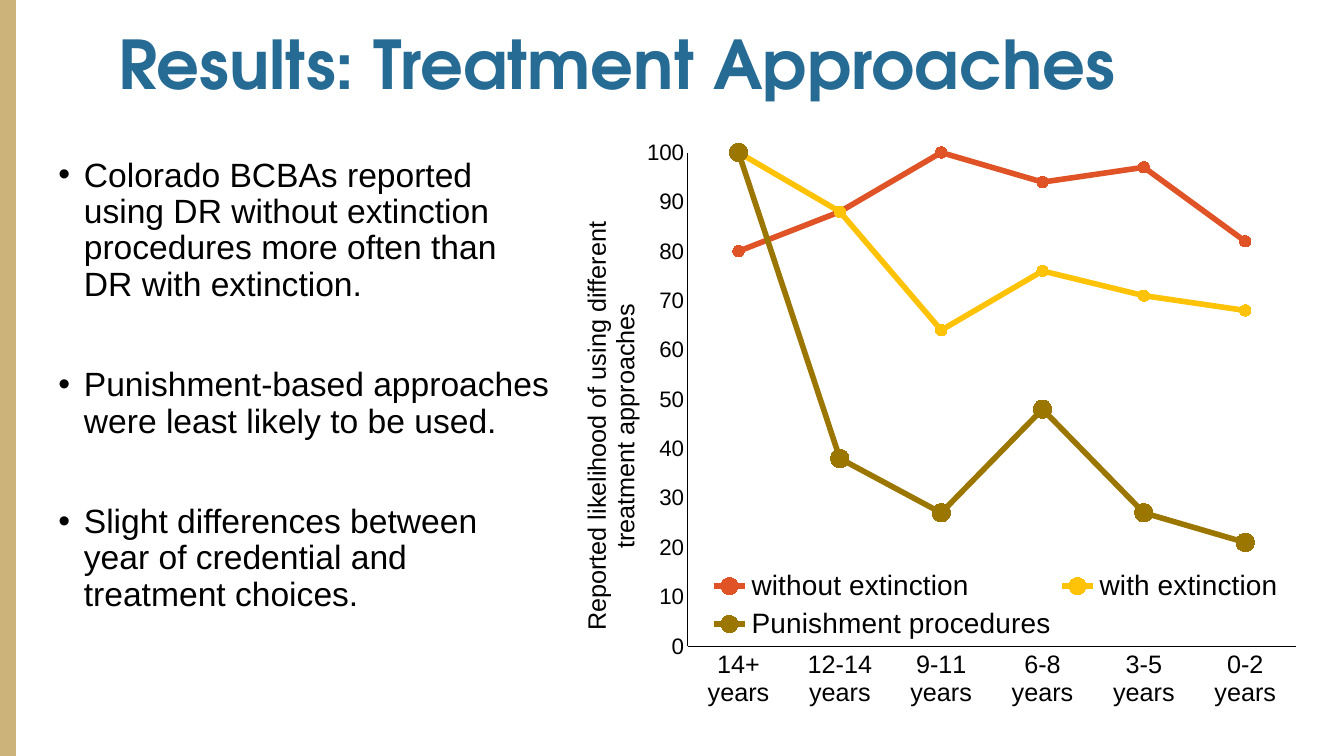
"""Build the treatment approaches results slide."""
from lxml.etree import Element, SubElement
from pptx import Presentation
from pptx.chart.data import CategoryChartData
from pptx.dml.color import RGBColor
from pptx.enum.chart import XL_CHART_TYPE, XL_LEGEND_POSITION, XL_MARKER_STYLE, XL_TICK_MARK
from pptx.enum.shapes import MSO_SHAPE
from pptx.enum.text import MSO_ANCHOR, MSO_AUTO_SIZE, PP_ALIGN
from pptx.oxml.ns import qn
from pptx.util import Cm, Pt

BLACK = RGBColor(0x00, 0x00, 0x00)
BLUE = RGBColor(0x25, 0x6B, 0x94)
SAND = RGBColor(0xCB, 0xB3, 0x79)
ORANGE = RGBColor(0xDF, 0x53, 0x27)
YELLOW = RGBColor(0xFE, 0xC3, 0x06)
BROWN = RGBColor(0x9B, 0x77, 0x01)

FINDINGS = [
    "Colorado BCBAs reported using DR without extinction procedures more often than DR with extinction.",
    "Punishment-based approaches were least likely to be used.",
    "Slight differences between year of credential and treatment choices.",
]
EXPERIENCE = ["14+ years", "12-14 years", "9-11 years", "6-8 years", "3-5 years", "0-2 years"]
APPROACHES = [
    ("without extinction", [80, 88, 100, 94, 97, 82], ORANGE, 8),
    ("with extinction", [100, 88, 64, 76, 71, 68], YELLOW, 8),
    ("Punishment procedures", [100, 38, 27, 48, 27, 21], BROWN, 13),
]


def set_all(target, **values):
    """Set each given attribute on the target."""
    for name, value in values.items():
        setattr(target, name, value)


def set_font(font, size, color=BLACK, name="Arial", bold=False):
    """Format a font."""
    set_all(font, size=Pt(size), name=name, bold=bold)
    font.color.rgb = color


def move(shape, left, top, width, height):
    """Place a shape by lengths in centimetres."""
    set_all(shape, left=Cm(left), top=Cm(top), width=Cm(width), height=Cm(height))


def set_layout(element, index, inner=False, **fractions):
    """Give a chart part a manual layout in fractions of the chart."""
    for old in element.findall(qn("c:layout")):
        element.remove(old)
    layout = Element(qn("c:layout"))
    element.insert(index, layout)
    manual = SubElement(layout, qn("c:manualLayout"))
    if inner:
        SubElement(manual, qn("c:layoutTarget"), val="inner")
    for name in ("xMode", "yMode"):
        SubElement(manual, qn(f"c:{name}"), val="edge")
    for name, value in fractions.items():
        SubElement(manual, qn(f"c:{name}"), val=str(value))


def add_side_bar(page, height):
    """Draw the coloured bar on the left edge."""
    bar = page.shapes.add_shape(MSO_SHAPE.RECTANGLE, 0, 0, Cm(0.4), height)
    bar.shadow.inherit = False
    bar.fill.solid()
    bar.fill.fore_color.rgb = SAND
    bar.line.fill.background()


def fill_title(title, text):
    """Write the slide title."""
    move(title, 2.72, 0.66, 28.42, 3.2)
    frame = title.text_frame
    set_all(frame, text=text, vertical_anchor=MSO_ANCHOR.TOP, auto_size=MSO_AUTO_SIZE.NONE)
    para = frame.paragraphs[0]
    set_all(para, alignment=PP_ALIGN.LEFT, line_spacing=0.9)
    set_font(para.runs[0].font, 48, BLUE, "TeX Gyre Adventor", True)


def fill_list(body, items):
    """Write the bulleted findings."""
    move(body, 1.22, 3.86, 12.9, 12.65)
    frame = body.text_frame
    set_all(frame, text="\n".join(items), auto_size=MSO_AUTO_SIZE.NONE)
    for index, para in enumerate(frame.paragraphs):
        properties = para._p.get_or_add_pPr()
        properties.set("marL", str(Cm(0.64)))
        properties.set("indent", str(Cm(-0.64)))
        set_all(para, line_spacing=0.9, space_before=Pt(46 if index else 0))
        set_font(para.runs[0].font, 24)


def format_axis(axis, size):
    """Give an axis a thin black line and plain labels."""
    set_all(axis, has_major_gridlines=False, major_tick_mark=XL_TICK_MARK.NONE,
            minor_tick_mark=XL_TICK_MARK.NONE)
    axis.format.line.color.rgb = BLACK
    axis.format.line.width = Pt(0.75)
    set_font(axis.tick_labels.font, size)


def format_series(series, color, marker_size):
    """Colour a line and its round markers."""
    series.smooth = False
    series.format.line.color.rgb = color
    series.format.line.width = Pt(4)
    marker = series.marker
    set_all(marker, style=XL_MARKER_STYLE.CIRCLE, size=marker_size)
    marker.format.fill.solid()
    marker.format.fill.fore_color.rgb = color
    marker.format.line.color.rgb = color


def add_approach_chart(page):
    """Add the line chart of treatment approaches by experience."""
    data = CategoryChartData(number_format="General")
    data.categories = EXPERIENCE
    for name, values, _, _ in APPROACHES:
        data.add_series(name, values)
    chart = page.shapes.add_chart(XL_CHART_TYPE.LINE_MARKERS, Cm(14.12), Cm(3.4),
                                  Cm(18.92), Cm(14.81), data).chart
    set_all(chart, has_title=False, has_legend=True)
    set_font(chart.font, 10)
    plot = chart.plots[0]
    plot.vary_by_categories = False
    for series, (_, _, color, marker_size) in zip(plot.series, APPROACHES):
        format_series(series, color, marker_size)

    format_axis(chart.category_axis, 18)
    value_axis = chart.value_axis
    format_axis(value_axis, 16)
    set_all(value_axis, minimum_scale=0, maximum_scale=100, major_unit=10)
    title = value_axis.axis_title
    title.text_frame.text = "Reported likelihood of using different treatment approaches"
    set_font(title.text_frame.paragraphs[0].runs[0].font, 18)

    legend = chart.legend
    set_all(legend, position=XL_LEGEND_POSITION.BOTTOM, include_in_layout=True)
    set_font(legend.font, 20)

    plot_area = chart._chartSpace.chart.plotArea
    set_layout(plot_area, 0, inner=True, x=0.17, y=0.03, w=0.81, h=0.84)
    set_layout(legend._element, 1, x=0.19, y=0.73, w=0.78, h=0.14)
    set_layout(title._element, 1, x=0.02, y=0.14)


def main():
    """Build and save the deck."""
    deck = Presentation()
    set_all(deck, slide_width=Cm(33.87), slide_height=Cm(19.05))
    page = deck.slides.add_slide(deck.slide_layouts[1])
    add_side_bar(page, deck.slide_height)
    fill_title(page.shapes.title, "Results: Treatment Approaches")
    fill_list(page.placeholders[1], FINDINGS)
    add_approach_chart(page)
    deck.save("out.pptx")


if __name__ == "__main__":
    main()
